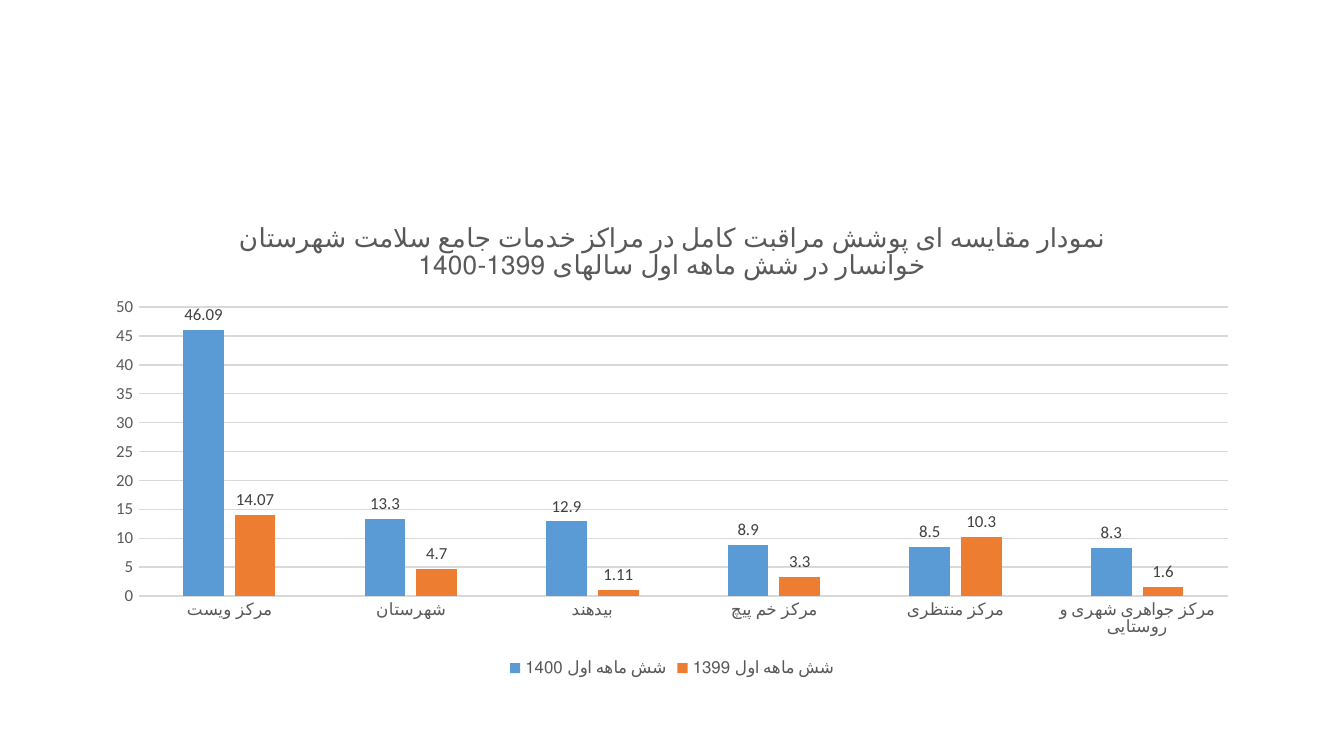
from pptx import Presentation
from pptx.chart.data import CategoryChartData
from pptx.dml.color import RGBColor
from pptx.enum.chart import XL_CHART_TYPE, XL_LABEL_POSITION, XL_LEGEND_POSITION, XL_TICK_MARK
from pptx.util import Pt

COLUMNS = XL_CHART_TYPE.COLUMN_CLUSTERED
OUTSIDE_END = XL_LABEL_POSITION.OUTSIDE_END
BOTTOM = XL_LEGEND_POSITION.BOTTOM
NO_TICK = XL_TICK_MARK.NONE

BLUE = RGBColor(0x5B, 0x9B, 0xD5)
ORANGE = RGBColor(0xED, 0x7D, 0x31)
GRAY = RGBColor(0x59, 0x59, 0x59)
DARK_GRAY = RGBColor(0x40, 0x40, 0x40)
LIGHT_GRAY = RGBColor(0xD9, 0xD9, 0xD9)
BLACK = RGBColor(0, 0, 0)

TITLE = "نمودار مقایسه ای پوشش مراقبت کامل در مراکز خدمات جامع سلامت شهرستان خوانسار در شش ماهه اول سالهای 1399-1400"
CENTERS = ["مرکز ویست", "شهرستان", "بیدهند", "مرکز خم پیچ", "مرکز منتظری", "مرکز جواهری شهری و روستایی"]
PERIODS = [
    ("شش ماهه اول 1400", BLUE, [46.09, 13.3, 12.9, 8.9, 8.5, 8.3]),
    ("شش ماهه اول 1399", ORANGE, [14.07, 4.7, 1.11, 3.3, 10.3, 1.6]),
]

SLIDE_SIZE = (1344, 756)
CHART_BOX = (93, 202, 1158, 480)
PX_PER_INCH = 134.4


def px(length):
    return round(length * 914400 / PX_PER_INCH)


def set_font(font, size, color):
    formats = {"name": "Calibri", "size": Pt(size), "bold": False}
    for name, value in formats.items():
        setattr(font, name, value)
    font.color.rgb = color


def set_line(line):
    line.color.rgb = LIGHT_GRAY
    line.width = Pt(0.75)


presentation = Presentation()
presentation.slide_width, presentation.slide_height = map(px, SLIDE_SIZE)
slide = presentation.slides.add_slide(presentation.slide_layouts[6])

chart_data = CategoryChartData()
chart_data.categories = CENTERS
for name, color, values in PERIODS:
    chart_data.add_series(name, values)
chart = slide.shapes.add_chart(COLUMNS, *map(px, CHART_BOX), chart_data).chart
set_font(chart.font, 10, BLACK)

chart.has_title = True
chart.chart_title.include_in_layout = False
title_frame = chart.chart_title.text_frame
title_frame.text = TITLE
set_font(title_frame.paragraphs[0].runs[0].font, 14, GRAY)

chart.has_legend = True
chart.legend.position = BOTTOM
chart.legend.include_in_layout = False
set_font(chart.legend.font, 9, GRAY)

for axis in (chart.category_axis, chart.value_axis):
    axis.major_tick_mark = axis.minor_tick_mark = NO_TICK
    set_font(axis.tick_labels.font, 9, GRAY)
set_line(chart.category_axis.format.line)
value_axis = chart.value_axis
value_axis.format.line.fill.background()
value_axis.has_major_gridlines = True
set_line(value_axis.major_gridlines.format.line)
value_axis.minimum_scale, value_axis.maximum_scale, value_axis.major_unit = 0, 50, 5

plot = chart.plots[0]
plot.gap_width, plot.overlap, plot.vary_by_categories = 219, -27, False
for series, (name, color, values) in zip(plot.series, PERIODS):
    series.format.fill.solid()
    series.format.fill.fore_color.rgb = color
    series.invert_if_negative = False
    labels = series.data_labels
    labels.show_value = True
    labels.position = OUTSIDE_END
    set_font(labels.font, 9, DARK_GRAY)

presentation.save("out.pptx")
